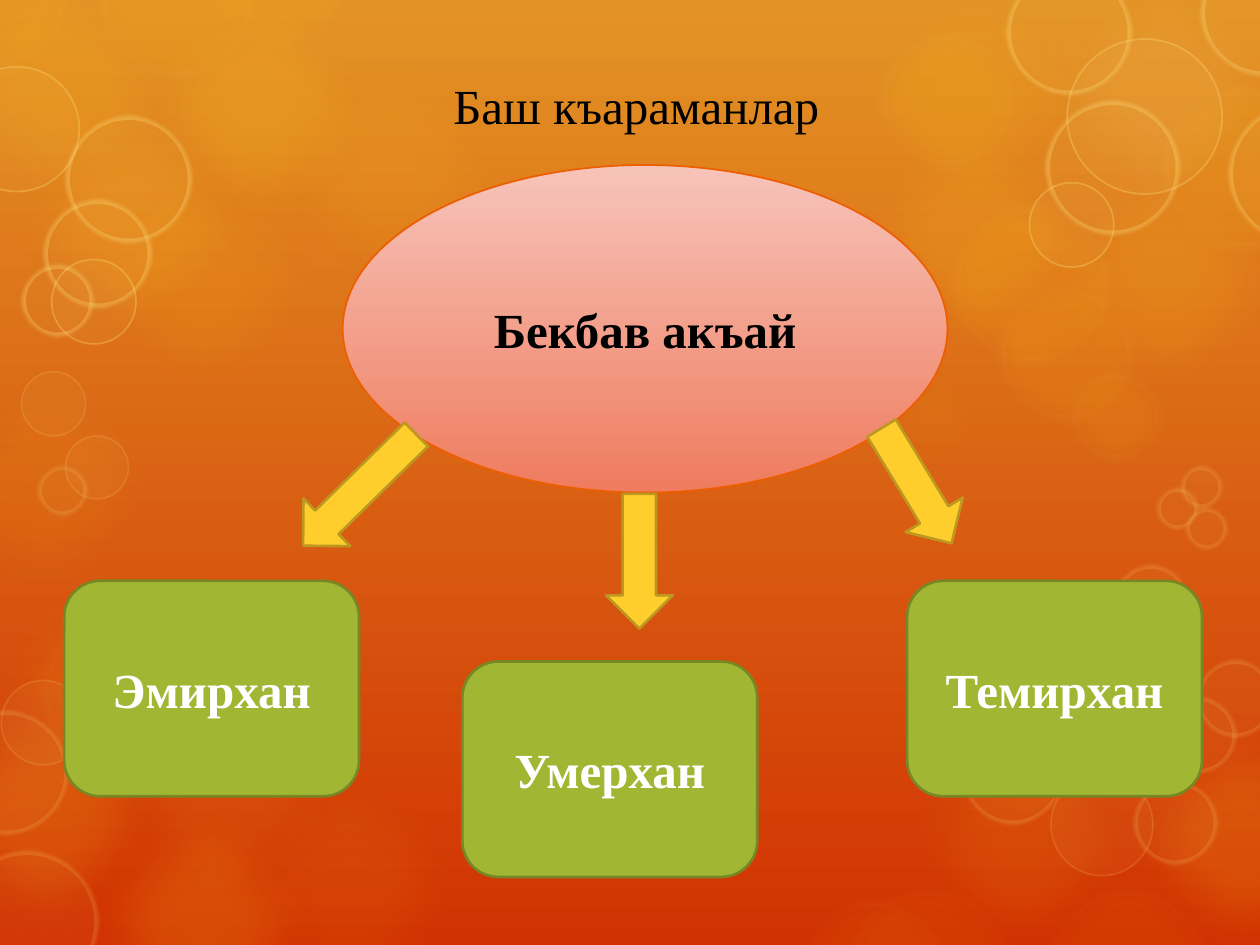
from lxml import etree
from pptx import Presentation
from pptx.dml.color import RGBColor
from pptx.enum.shapes import MSO_SHAPE
from pptx.enum.text import MSO_ANCHOR, PP_ALIGN
from pptx.oxml.ns import qn
from pptx.util import Inches, Pt

OVAL, BOX, ARROW = MSO_SHAPE.OVAL, MSO_SHAPE.ROUNDED_RECTANGLE, MSO_SHAPE.DOWN_ARROW
MIDDLE, TOP = MSO_ANCHOR.MIDDLE, MSO_ANCHOR.TOP
CENTER = PP_ALIGN.CENTER

THEME = {
    "font": "Times New Roman", "size": 28,
    "dark": "000000", "light": "FFFFFF",
    "background": ("E39325", "D13202"),
    "hero": ("F7C4BA", "EF7C5E"), "hero_line": "ED5E00",
    "box": "A1B633", "box_line": "778726",
    "arrow": "FFCE2D", "arrow_line": "BD9821",
    "glow": "FDC61B", "pale": "FFE281", "rim": "FEEBAE",
}

TITLE = ("Баш къараманлар", (3.48, 0.55, 3.14, 0.57))
HERO = ("Бекбав акъай", (2.72, 1.31, 4.8, 2.6))
SONS = [("Эмирхан", 0.51, 4.61), ("Умерхан", 3.67, 5.25), ("Темирхан", 7.2, 4.61)]
SON_SIZE = (2.34, 1.71)
ARROWS = [((2.59, 3.26, 0.53, 1.26), 45.5),
          ((4.81, 3.92, 0.53, 1.07), 0),
          ((7.01, 3.32, 0.53, 1.07), 328.7)]

GLOW = 2.09
GLOWS = [
    (-0.26, 4.42, 8), (0.57, 1.2, 10), (2.05, 0.31, 10), (0.57, 6.27, 16),
    (-0.56, -0.32, 14), (1.01, -0.18, 20), (0, 0.72, 15), (6.69, -0.29, 10),
    (8.2, 1.2, 15), (8.81, 5.62, 16), (7.29, 4.77, 5), (-0.69, 5.41, 16),
    (0.77, 5.24, 8), (6.69, 0.86, 15), (7.06, 5.62, 10), (1.73, 5.96, 8),
    (-0.69, 2.82, 8),
]
# fill, fill opacity, line, width, line opacity, soft edge, circles
BUBBLES = [
    ("glow", 10, None, 0, 0, 0.35, [(6.75, 2.62, 1.33)]),
    ("pale", 10, None, 0, 0, 0.35, [(8.2, -0.32, GLOW)]),
    ("glow", 10, "rim", 14, 6, 0.15, [
        (9.18, 0.65, 1.37), (6.94, 0.23, 1.14), (7.52, 1.59, 1.33), (7.89, 2.24, 1.14),
        (8.47, 2.91, 0.79), (0.75, -0.66, 1.31), (1.64, -0.75, 1.14), (-0.57, -0.58, 1.14)]),
    ("glow", 6, "rim", 14, 4, 0.15, [
        (0.3, 4.73, 1.53), (6.32, 7.1, 1.24), (6.69, 7.01, 1.37), (8.27, 7.01, 1.37)]),
    ("pale", 5, "pale", 5, 15, 0.03, [
        (-0.35, 6.75, 1.13), (-0.44, 5.64, 0.98), (7.63, 5.73, 0.81), (9, 6.2, 0.66),
        (8.83, 4.48, 0.61), (9.2, 5.53, 0.61), (9.5, 5.24, 0.61), (9.37, 3.7, 0.33),
        (9.18, 3.87, 0.33), (9.41, 4.03, 0.33), (0.3, 3.7, 0.39)]),
    ("pale", 5, "pale", 5, 30, 0.03, [
        (0.52, 0.92, 1), (0.35, 1.59, 0.85), (0.17, 2.1, 0.57), (7.99, -0.24, 0.99),
        (9.53, -0.39, 0.99), (9.75, 0.82, 1.12), (8.3, 0.8, 1.06)]),
    ("pale", 5, "pale", 1, 15, 0, [
        (0.01, 5.4, 0.67), (8.34, 6.14, 0.81), (0.17, 2.95, 0.51), (0.52, 3.46, 0.5)]),
    ("pale", 5, "pale", 1, 30, 0, [
        (-0.36, 0.53, 0.99), (0.41, 2.06, 0.67), (8.47, 0.31, 1.23), (8.17, 1.45, 0.67)]),
]


def rgb(name):
    return RGBColor.from_string(THEME[name])


def gradient(fill, colors):
    fill.gradient()
    fill.gradient_angle = 270
    for stop, color, position in zip(fill.gradient_stops, colors, (0, 1)):
        stop.color.rgb = RGBColor.from_string(color)
        stop.position = position


def write(sp, text, color, bold, anchor):
    tf = sp.text_frame
    tf.vertical_anchor = anchor
    p = tf.paragraphs[0]
    p.text = text
    p.alignment = CENTER
    p.font.name, p.font.size, p.font.bold = THEME["font"], Pt(THEME["size"]), bold
    p.font.color.rgb = rgb(color)


def add(s, kind, at, fill, line, width):
    sp = s.shapes.add_shape(kind, *map(Inches, at))
    sp.shadow.inherit = False
    if fill == "hero":
        gradient(sp.fill, THEME[fill])
    else:
        sp.fill.solid()
        sp.fill.fore_color.rgb = rgb(fill)
    if line:
        sp.line.color.rgb = rgb(line)
        sp.line.width = Pt(width)
    else:
        sp.line.fill.background()
    return sp


def bubble(s, circle, fill, opacity, line, width, line_opacity, soft):
    x, y, d = circle
    spPr = add(s, OVAL, (x, y, d, d), fill, line, width)._element.spPr
    for color, alpha in zip(spPr.iter(qn("a:srgbClr")), (opacity, line_opacity)):
        etree.SubElement(color, qn("a:alpha"), val=str(alpha * 1000))
    if soft:
        etree.SubElement(spPr.find(qn("a:effectLst")), qn("a:softEdge"), rad=str(int(Inches(soft))))


def main():
    prs = Presentation()
    prs.slide_width, prs.slide_height = Inches(10), Inches(7.5)
    s = prs.slides.add_slide(prs.slide_layouts[5])
    gradient(s.background.fill, THEME["background"])

    for x, y, opacity in GLOWS:
        bubble(s, (x, y, GLOW), "glow", opacity, None, 0, 0, 0.35)
    for *look, circles in BUBBLES:
        for circle in circles:
            bubble(s, circle, *look)

    text, at = TITLE
    title = s.shapes.title
    title.left, title.top, title.width, title.height = map(Inches, at)
    write(title, text, "dark", False, TOP)
    title.text_frame.word_wrap = False
    title.text_frame.paragraphs[0].space_before = Pt(5.6)
    s.shapes._spTree.append(title._element)

    text, at = HERO
    write(add(s, OVAL, at, "hero", "hero_line", 1), text, "dark", True, MIDDLE)
    for text, x, y in SONS:
        sp = add(s, BOX, (x, y, *SON_SIZE), "box", "box_line", 1.5)
        write(sp, text, "light", True, MIDDLE)
    for at, turn in ARROWS:
        add(s, ARROW, at, "arrow", "arrow_line", 1.5).rotation = turn

    prs.save("out.pptx")


if __name__ == "__main__":
    main()
